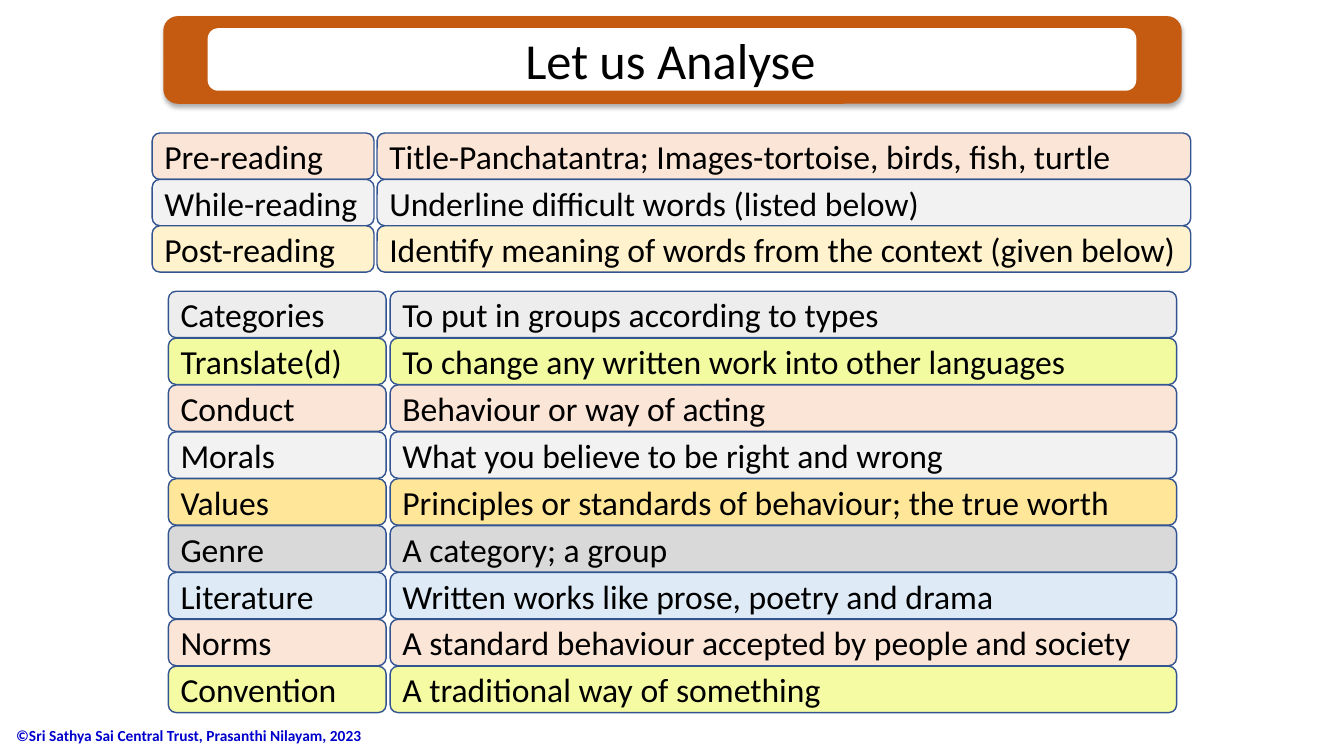
from lxml import etree
from pptx import Presentation
from pptx.dml.color import RGBColor
from pptx.enum import shapes, text
from pptx.oxml import ns
from pptx.util import Inches, Pt

COLORS = {
    "ink": "000000", "white": "FFFFFF", "copyright": "0000CC",
    "banner": "C55A11", "outline": "325491",
    "peach": "FBE5D6", "pale grey": "F2F2F2", "cream": "FFF2CC",
    "silver": "EDEDED", "lime": "F2FB9F", "gold": "FFE699",
    "grey": "D9D9D9", "sky": "DEEBF7", "lemon": "F5FBA3",
}
ROW_HEIGHT = 0.46

deck = Presentation()
deck.slide_width, deck.slide_height = Inches(13.33), Inches(7.5)
slide = deck.slides.add_slide(deck.slide_layouts[5])


def add_panel(left, top, width, height, fill):
    panel = slide.shapes.add_shape(
        shapes.MSO_SHAPE.ROUNDED_RECTANGLE,
        Inches(left), Inches(top), Inches(width), Inches(height))
    panel.shadow.inherit = False
    panel.fill.solid()
    panel.fill.fore_color.rgb = RGBColor.from_string(COLORS[fill])
    panel.line.fill.background()
    return panel


def style(paragraph, size, color="ink"):
    paragraph.alignment = text.PP_ALIGN.LEFT
    paragraph.font.name = "Calibri"
    paragraph.font.size = Pt(size)
    paragraph.font.color.rgb = RGBColor.from_string(COLORS[color])


# Copyright line
copyright_line = slide.shapes.add_textbox(
    Inches(-0.44), Inches(7.09), Inches(4.31), Inches(0.41))
frame = copyright_line.text_frame
frame.word_wrap = True
frame.vertical_anchor = text.MSO_ANCHOR.MIDDLE
frame.margin_left = Inches(0.6)
frame.text = "©Sri Sathya Sai Central Trust, Prasanthi Nilayam, 2023"
style(frame.paragraphs[0], 11, "copyright")
frame.paragraphs[0].font.bold = True

# Banner with a soft shadow below it
banner = add_panel(1.62, 0.16, 10.1, 0.87, "banner")
effects = banner._element.spPr.find(ns.qn("a:effectLst"))
shadow = etree.SubElement(
    effects, ns.qn("a:outerShdw"), blurRad=str(Pt(3.5)), dist=str(Pt(2.2)),
    dir="5400000", algn="t", rotWithShape="0")
shadow_color = etree.SubElement(shadow, ns.qn("a:srgbClr"), val=COLORS["ink"])
etree.SubElement(shadow_color, ns.qn("a:alpha"), val="32000")
add_panel(2.06, 0.28, 9.21, 0.62, "white")

# Title, brought in front of the banner
title = slide.shapes.title
title.left, title.top = Inches(5.11), Inches(0.24)
title.width, title.height = Inches(3.12), Inches(0.62)
title.text_frame.text = "Let us Analyse"
title.text_frame.auto_size = text.MSO_AUTO_SIZE.NONE
title.text_frame.vertical_anchor = text.MSO_ANCHOR.TOP
style(title.text_frame.paragraphs[0], 36)
slide.shapes._spTree.append(title._element)

# Reading stages and vocabulary: first top, row pitch, (left, width) pairs, rows
stages = [
    ("Pre-reading", "Title-Panchatantra; Images-tortoise, birds, fish, turtle", "peach"),
    ("While-reading", "Underline difficult words (listed below)", "pale grey"),
    ("Post-reading", "Identify meaning of words from the context (given below)", "cream"),
]
vocabulary = [
    ("Categories", "To put in groups according to types", "silver"),
    ("Translate(d)", "To change any written work into other languages", "lime"),
    ("Conduct", "Behaviour or way of acting", "peach"),
    ("Morals", "What you believe to be right and wrong", "pale grey"),
    ("Values", "Principles or standards of behaviour; the true worth", "gold"),
    ("Genre", "A category; a group", "grey"),
    ("Literature", "Written works like prose, poetry and drama", "sky"),
    ("Norms", "A standard behaviour accepted by people and society", "peach"),
    ("Convention", "A traditional way of something", "lemon"),
]
groups = [
    (1.32, 0.46, [(1.51, 2.2), (3.74, 8.07)], stages),
    (2.89, 3.72 / 8, [(1.67, 2.16), (3.87, 7.8)], vocabulary),
]
for first_top, pitch, columns, rows in groups:
    for index, (term, meaning, fill) in enumerate(rows):
        for (left, width), wording in zip(columns, (term, meaning)):
            entry = add_panel(left, first_top + index * pitch, width, ROW_HEIGHT, fill)
            entry.line.color.rgb = RGBColor.from_string(COLORS["outline"])
            entry.line.width = Pt(1)
            entry.text_frame.vertical_anchor = text.MSO_ANCHOR.MIDDLE
            entry.text_frame.word_wrap = True
            entry.text_frame.text = wording
            style(entry.text_frame.paragraphs[0], 24)

deck.save("out.pptx")
